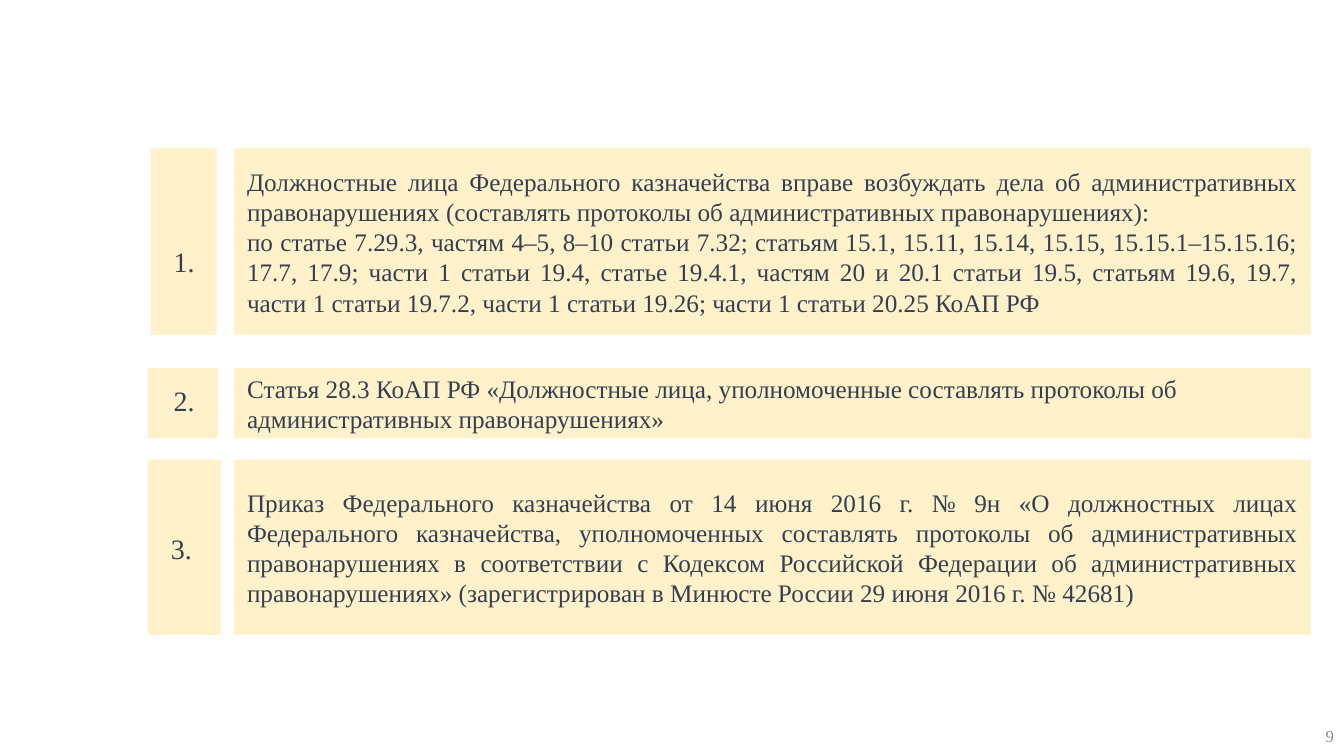
from dataclasses import dataclass

import pptx
import pptx.dml.color
import pptx.enum.shapes
import pptx.enum.text
import pptx.util

PX = 9144  # EMU, 100 px to the inch
FONT = "Times New Roman"
CREAM, SLATE, GREY = "FFF1CA", "333F50", "8C8C8C"
ALIGN = pptx.enum.text.PP_ALIGN
MIDDLE = pptx.enum.text.MSO_ANCHOR.MIDDLE
TOP = pptx.enum.text.MSO_ANCHOR.TOP
BODY_LEFT, BODY_WIDTH = 232, 1068
NUMBER_HEIGHT = 44


@dataclass
class Box:
    left: int
    top: int
    width: int
    height: int

    def emu(self) -> list[int]:
        return [v * PX for v in (self.left, self.top, self.width, self.height)]


@dataclass
class Clause:
    badge: Box
    number: Box
    align: ALIGN
    space_after: int
    paragraphs: list[str]


CLAUSES = [
    Clause(Box(150, 147, 65, 185), Box(153, 238, 59, NUMBER_HEIGHT), ALIGN.JUSTIFY, 0, [
        "Должностные лица Федерального казначейства вправе возбуждать дела об "
        "административных правонарушениях (составлять протоколы об "
        "административных правонарушениях):",
        "по статье 7.29.3, частям 4–5, 8–10 статьи 7.32; статьям 15.1, 15.11, 15.14, "
        "15.15, 15.15.1–15.15.16; 17.7, 17.9; части 1 статьи 19.4, статье 19.4.1, "
        "частям 20 и 20.1 статьи 19.5, статьям 19.6, 19.7, части 1 статьи 19.7.2, "
        "части 1 статьи 19.26; части 1 статьи 20.25 КоАП РФ",
    ]),
    Clause(Box(147, 365, 69, 70), Box(153, 376, 59, NUMBER_HEIGHT), ALIGN.LEFT, 8, [
        "Статья 28.3 КоАП РФ «Должностные лица, уполномоченные составлять протоколы "
        "об административных правонарушениях»",
    ]),
    Clause(Box(147, 456, 72, 174), Box(147, 522, 66, NUMBER_HEIGHT), ALIGN.JUSTIFY, 8, [
        "Приказ Федерального казначейства от 14 июня 2016 г. № 9н «О должностных лицах "
        "Федерального казначейства, уполномоченных составлять протоколы об "
        "административных правонарушениях в соответствии с Кодексом Российской "
        "Федерации об административных правонарушениях» (зарегистрирован в Минюсте "
        "России 29 июня 2016 г. № 42681)",
    ]),
]


def rgb(value: str) -> pptx.dml.color.RGBColor:
    return pptx.dml.color.RGBColor.from_string(value)


def add_panel(s, box: Box):
    sp = s.shapes.add_shape(pptx.enum.shapes.MSO_SHAPE.RECTANGLE, *box.emu())
    sp.shadow.inherit = False
    sp.fill.solid()
    sp.fill.fore_color.rgb = rgb(CREAM)
    sp.line.fill.background()
    return sp


def write(tf, paragraphs: list[str], size: int, color: str, align: ALIGN,
          anchor, inset: tuple[int, int], space_after: int = 0) -> None:
    side, edge = (v * PX for v in inset)
    frame_format = {
        "word_wrap": True, "vertical_anchor": anchor,
        "margin_left": side, "margin_right": side,
        "margin_top": edge, "margin_bottom": edge,
    }
    for name, value in frame_format.items():
        setattr(tf, name, value)
    for i, text in enumerate(paragraphs):
        p = tf.add_paragraph() if i else tf.paragraphs[0]
        p.alignment = align
        p.space_after = pptx.util.Pt(space_after)
        r = p.add_run()
        r.text = text
        for name, value in {"name": FONT, "size": pptx.util.Pt(size)}.items():
            setattr(r.font, name, value)
        r.font.color.rgb = rgb(color)


def add_label(s, box: Box, text: str, size: int, color: str, align: ALIGN, anchor) -> None:
    tf = s.shapes.add_textbox(*box.emu()).text_frame
    write(tf, [text], size, color, align, anchor, (10, 5))


def add_clause(s, index: int, clause: Clause) -> None:
    add_panel(s, clause.badge)
    body = add_panel(s, Box(BODY_LEFT, clause.badge.top, BODY_WIDTH, clause.badge.height))
    write(body.text_frame, clause.paragraphs, 18, SLATE, clause.align, MIDDLE,
          (13, 7), clause.space_after)
    add_label(s, clause.number, f"{index}.", 20, SLATE, ALIGN.CENTER, TOP)


def main() -> None:
    prs = pptx.Presentation()
    prs.slide_width, prs.slide_height = 1333 * PX, 750 * PX
    s = prs.slides.add_slide(prs.slide_layouts[6])
    for index, clause in enumerate(CLAUSES, start=1):
        add_clause(s, index, clause)
    add_label(s, Box(1033, 710, 300, 40), "9", 12, GREY, ALIGN.RIGHT, MIDDLE)
    prs.save("out.pptx")


if __name__ == "__main__":
    main()
